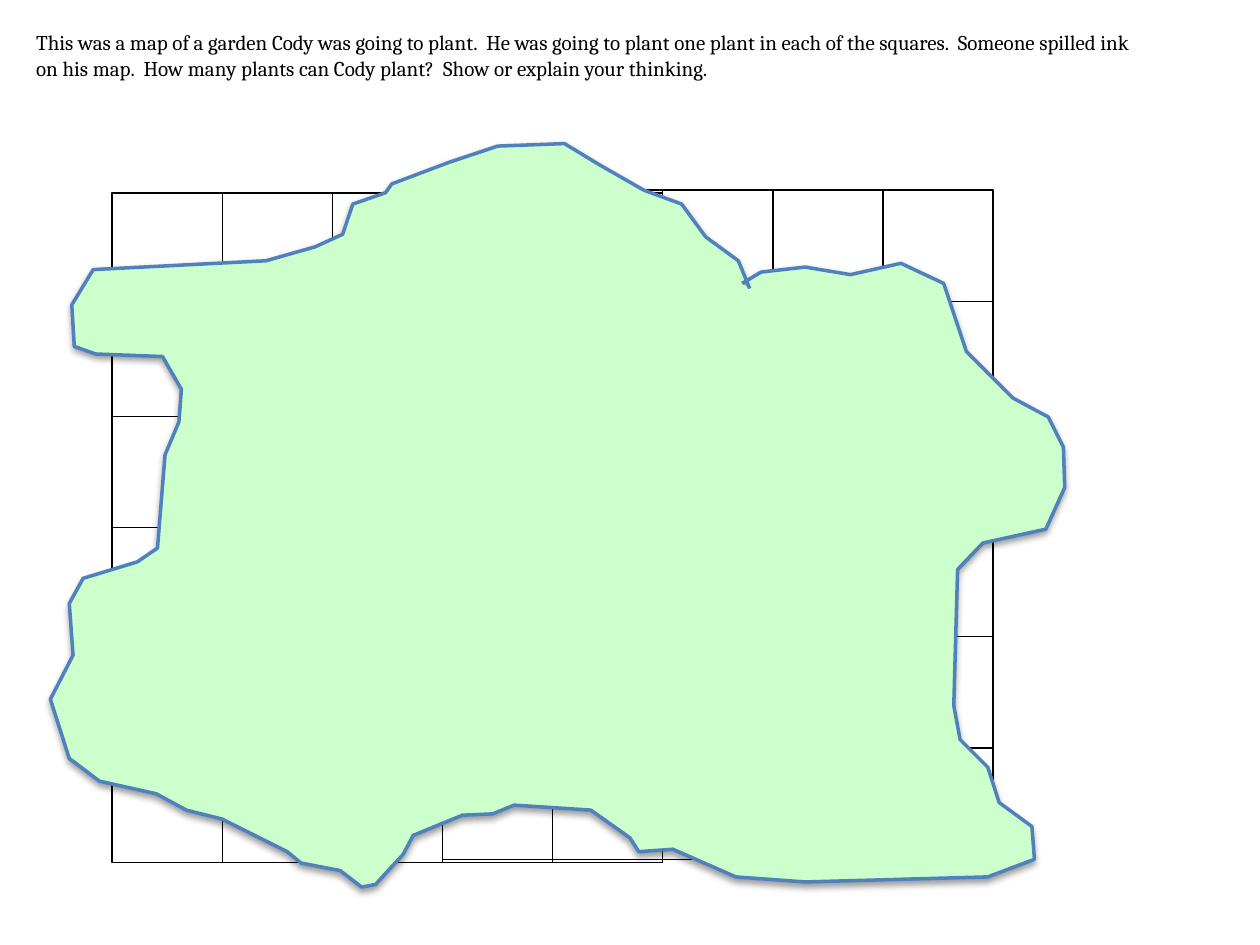
from dataclasses import dataclass

from lxml.etree import SubElement
from pptx import Presentation
from pptx.dml.color import RGBColor
from pptx.enum.shapes import MSO_CONNECTOR, MSO_SHAPE
from pptx.oxml.ns import qn
from pptx.slide import Slide
from pptx.util import Cm, Pt

BLACK = "000000"
INK_FILL = "CCFFCC"
INK_EDGE = "4F81BD"

COLUMNS, ROWS = 5, 6
CELL_WIDTH, CELL_HEIGHT = Cm(2.22), Cm(2.25)

QUESTION = (
    "This was a map of a garden Cody was going to plant.  He was going to plant "
    "one plant in each of the squares.  Someone spilled ink on his map.  How many "
    "plants can Cody plant?  Show or explain your thinking."
)

# Outline of the spill, in hundredths of an inch on the page
INK_UNIT = Cm(2.54) / 100
INK_OUTLINE = [
    # top edge, right to left
    (595, 229), (586, 207), (560, 188), (541, 162), (511, 151), (476, 131),
    (448, 114), (395, 116), (356, 129), (311, 146), (306, 153), (280, 162),
    (272, 186), (250, 196), (211, 207),
    # left side, downwards
    (74, 214), (57, 242), (59, 275), (76, 281), (129, 283), (144, 309),
    (142, 335), (131, 361), (125, 435), (109, 446), (66, 459), (55, 479),
    (58, 520), (40, 555), (55, 602), (79, 620),
    # bottom edge, left to right
    (124, 630), (148, 643), (176, 650), (228, 676), (239, 685), (270, 691),
    (287, 704), (298, 702), (320, 678), (328, 663), (367, 647), (391, 646),
    (408, 639), (469, 643), (500, 665), (507, 676), (534, 674), (584, 696),
    (639, 700), (784, 696), (821, 682),
    # right side, upwards
    (819, 656), (793, 637), (784, 609), (762, 587), (757, 560), (760, 452),
    (780, 431), (830, 420), (845, 387), (844, 355), (832, 331), (804, 316),
    (767, 279), (749, 225), (715, 209), (675, 218), (639, 212), (604, 216),
    (589, 225),
]


@dataclass
class Grid:
    left: Cm
    top: Cm


GRIDS = [Grid(Cm(2.26), Cm(3.89)), Grid(Cm(8.92), Cm(3.83))]


def color(value: str) -> RGBColor:
    return RGBColor.from_string(value)


def add_line(shapes, x1: int, y1: int, x2: int, y2: int):
    line = shapes.add_connector(MSO_CONNECTOR.STRAIGHT, x1, y1, x2, y2)
    line.line.color.rgb = color(BLACK)
    line.line.width = Pt(0.75)
    SubElement(line._element.spPr, qn("a:effectLst"))
    return line


def draw_grid(page: Slide, grid: Grid) -> None:
    shapes = page.shapes.add_group_shape().shapes
    width, height = COLUMNS * CELL_WIDTH, ROWS * CELL_HEIGHT
    right, bottom = grid.left + width, grid.top + height

    frame = shapes.add_shape(MSO_SHAPE.RECTANGLE, grid.left, grid.top, width, height)
    frame.shadow.inherit = False
    frame.fill.background()
    frame.line.color.rgb = color(BLACK)
    frame.line.width = Pt(0.75)

    for column in range(1, COLUMNS):
        x = grid.left + column * CELL_WIDTH
        add_line(shapes, x, bottom, x, grid.top)
    for row in range(1, ROWS):
        y = grid.top + row * CELL_HEIGHT
        line = add_line(shapes, grid.left, y, right, y)
        if 2 * row == ROWS:
            line.begin_connect(frame, 1)
            line.end_connect(frame, 3)


def draw_ink(page: Slide) -> None:
    builder = page.shapes.build_freeform(*INK_OUTLINE[0], scale=INK_UNIT)
    builder.add_line_segments(INK_OUTLINE[1:], close=False)
    ink = builder.convert_to_shape()
    ink.fill.solid()
    ink.fill.fore_color.rgb = color(INK_FILL)
    ink.line.color.rgb = color(INK_EDGE)
    ink.line.width = Pt(2)
    SubElement(ink._element.spPr.find(qn("a:ln")), qn("a:round"))

    # Soft shadow below the spill
    effects = SubElement(ink._element.spPr, qn("a:effectLst"))
    shadow = SubElement(effects, qn("a:outerShdw"), blurRad="40000", dist="20000",
                        dir="5400000", rotWithShape="0")
    shade = SubElement(shadow, qn("a:srgbClr"), val=BLACK)
    SubElement(shade, qn("a:alpha"), val="38000")


def draw_question(page: Slide) -> None:
    box = page.shapes.add_textbox(Cm(0.48), Cm(0.48), Cm(22.89), Cm(1.28))
    box.text_frame.word_wrap = True
    box.text_frame.text = QUESTION
    font = box.text_frame.paragraphs[0].runs[0].font
    font.name = "Cambria"
    font.size = Pt(12)
    font.color.rgb = color(BLACK)


def main() -> None:
    deck = Presentation()
    deck.slide_width, deck.slide_height = Cm(25.4), Cm(19.05)
    page = deck.slides.add_slide(deck.slide_layouts[6])
    draw_question(page)
    for grid in GRIDS:
        draw_grid(page, grid)
    draw_ink(page)
    deck.save("out.pptx")


if __name__ == "__main__":
    main()
